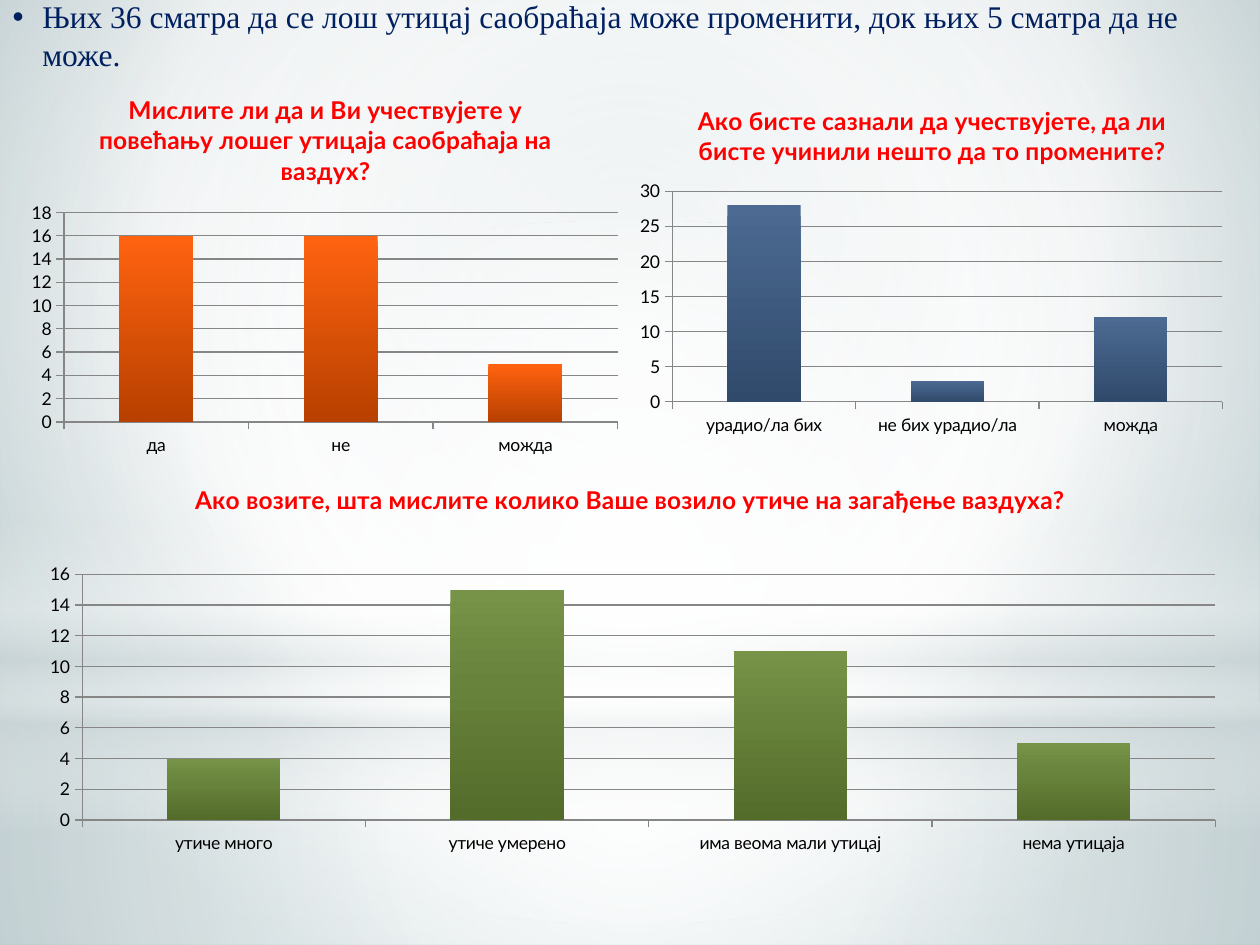
from pptx import Presentation
from pptx.chart.data import CategoryChartData
from pptx.dml.color import RGBColor
from pptx.enum.chart import XL_CHART_TYPE as ChartType, XL_TICK_MARK as Tick
from pptx.enum.shapes import MSO_SHAPE as Shape
from pptx.enum.text import MSO_ANCHOR as Anchor, MSO_AUTO_SIZE as AutoSize, PP_ALIGN as Align
from pptx.oxml import parse_xml
from pptx.oxml.ns import nsdecls, qn
from pptx.util import Cm, Pt

NAVY = RGBColor(0x00, 0x20, 0x60)
RED = RGBColor(0xFF, 0x00, 0x00)
BLACK = RGBColor(0x00, 0x00, 0x00)
GRID = RGBColor(0x86, 0x86, 0x86)
WHITE = RGBColor(0xFF, 0xFF, 0xFF)
MIST = RGBColor(0xCD, 0xD7, 0xD9)
HAZE = RGBColor(0xC2, 0xD0, 0xD3)
TEAL = RGBColor(0x9A, 0xB5, 0xBA)
ORANGE = RGBColor(0xFF, 0x63, 0x10), RGBColor(0xB8, 0x40, 0x00)
BLUE = RGBColor(0x4C, 0x6A, 0x92), RGBColor(0x30, 0x4A, 0x6B)
GREEN = RGBColor(0x76, 0x93, 0x48), RGBColor(0x53, 0x6C, 0x2A)

WIDTH, HEIGHT = 25.4, 19.05
CENTER = (50, 50, 50, 50)
STATEMENT = "Њих 36 сматра да се лош утицај саобраћаја може променити, док њих 5 сматра да не може."

GLOWS = [
    (Shape.RECTANGLE, (0, 14.17, WIDTH, 4.88),
     [(0, WHITE, 91), (37, WHITE, 76), (100, MIST, 79)], CENTER),
    (Shape.RECTANGLE, (0, 0, WIDTH, 14.17),
     [(0, WHITE, 89), (48, WHITE, 62), (100, MIST, 79)], CENTER),
    (Shape.RECTANGLE, (0, 10.46, WIDTH, 6.35),
     [(0, WHITE, 0), (29, WHITE, 30), (45, MIST, 40), (55, WHITE, 26),
      (65, MIST, 60), (100, WHITE, 0)], None),
    (Shape.OVAL, (0, 4.45, WIDTH, 14.17), [(0, WHITE, 100), (56, WHITE, 0)], CENTER),
]

CHARTS = [
    dict(box=(0.43, 1.47, 12.27, 7.82), plot=(0.07, 0.36, 0.91, 0.54),
         title="Мислите ли да и Ви учествујете у повећању лошег утицаја саобраћаја на ваздух?",
         cats=["да", "не", "можда"], vals=[16, 16, 5], top=18, step=2, colors=ORANGE),
    dict(box=(12.7, 1.7, 12.19, 7.19), plot=(0.07, 0.3, 0.91, 0.59),
         title="Ако бисте сазнали да учествујете, да ли бисте учинили нешто да то промените?",
         cats=["урадио/ла бих", "не бих урадио/ла", "можда"], vals=[28, 3, 12],
         top=30, step=5, colors=BLUE),
    dict(box=(0.43, 9.32, 24.56, 8.69), plot=(0.05, 0.26, 0.93, 0.57),
         title="Ако возите, шта мислите колико Ваше возило утиче на загађење ваздуха?",
         cats=["утиче много", "утиче умерено", "има веома мали утицај", "нема утицаја"],
         vals=[4, 15, 11, 5], top=16, step=2, colors=GREEN),
]


def set_attrs(obj, **values):
    """Set each named value on the object."""
    for name, value in values.items():
        setattr(obj, name, value)


def set_gradient(props, stops, focus):
    """Swap a solid fill for a gradient, circular when a focus is given."""
    gs = "".join(
        f'<a:gs pos="{pos * 1000}"><a:srgbClr val="{color}">'
        f'<a:alpha val="{alpha * 1000}"/></a:srgbClr></a:gs>'
        for pos, color, alpha in stops)
    if focus:
        rect = " ".join(f'{side}="{v * 1000}"' for side, v in zip("ltrb", focus))
        shade = f'<a:path path="circle"><a:fillToRect {rect}/></a:path>'
    else:
        shade = '<a:lin ang="5400000" scaled="0"/>'
    solid = props.find(qn("a:solidFill"))
    props.replace(solid, parse_xml(
        f'<a:gradFill {nsdecls("a")} rotWithShape="1"><a:gsLst>{gs}</a:gsLst>{shade}</a:gradFill>'))


def add_backdrop(slide):
    """Fill the background and lay the translucent glows over it."""
    slide.background.fill.solid()
    props = slide.element.find(".//" + qn("p:bgPr"))
    set_gradient(props, [(0, HAZE, 100), (60, WHITE, 100), (100, TEAL, 100)], (20, 10, 20, 60))
    for kind, box, stops, focus in GLOWS:
        sp = slide.shapes.add_shape(kind, *map(Cm, box))
        sp.shadow.inherit = False
        sp.line.fill.background()
        sp.fill.solid()
        set_gradient(sp.element.spPr, stops, focus)


def add_statement(slide, box):
    """Place the bulleted statement in the title placeholder, in front of the backdrop."""
    sp = slide.shapes.title
    slide.shapes.element.append(sp.element)
    left, top, width, height = map(Cm, box)
    set_attrs(sp, left=left, top=top, width=width, height=height)
    tf = sp.text_frame
    tf.text = STATEMENT
    set_attrs(tf, word_wrap=False, auto_size=AutoSize.SHAPE_TO_FIT_TEXT,
              vertical_anchor=Anchor.MIDDLE)
    p = tf.paragraphs[0]
    p.alignment = Align.LEFT
    pPr = p._p.get_or_add_pPr()
    pPr.append(parse_xml(f'<a:buFont {nsdecls("a")} typeface="Arial"/>'))
    pPr.append(parse_xml(f'<a:buChar {nsdecls("a")} char="•"/>'))
    r = p.runs[0]
    set_attrs(r.font, name="Times New Roman", size=Pt(18))
    r.font.color.rgb = NAVY


def set_plot_area(chart, plot):
    """Pin the inner plot area to fractions of the chart."""
    area = chart.element.find(".//" + qn("c:plotArea"))
    for old in area.findall(qn("c:layout")):
        area.remove(old)
    sizes = "".join(f'<c:{tag} val="{v}"/>' for tag, v in zip("xywh", plot))
    area.insert(0, parse_xml(
        f'<c:layout {nsdecls("c")}><c:manualLayout><c:layoutTarget val="inner"/>'
        f'<c:xMode val="edge"/><c:yMode val="edge"/>{sizes}</c:manualLayout></c:layout>'))


def add_column_chart(slide, box, plot, title, cats, vals, top, step, colors):
    """Add one titled column chart with gradient bars."""
    data = CategoryChartData()
    data.categories = cats
    data.add_series("Series 1", vals)
    chart = slide.shapes.add_chart(ChartType.COLUMN_CLUSTERED, *map(Cm, box), data).chart
    set_attrs(chart, has_legend=False, has_title=True)
    set_attrs(chart.font, name="Lato", size=Pt(10))
    chart.font.color.rgb = BLACK

    tf = chart.chart_title.text_frame
    tf.text = title
    font = tf.paragraphs[0].runs[0].font
    set_attrs(font, name="Lato", size=Pt(14), bold=True)
    font.color.rgb = RED
    chart.chart_title.include_in_layout = False

    value_axis = chart.value_axis
    set_attrs(value_axis, minimum_scale=0, maximum_scale=top, major_unit=step,
              has_major_gridlines=True)
    for axis in (chart.category_axis, value_axis):
        set_attrs(axis, major_tick_mark=Tick.OUTSIDE, minor_tick_mark=Tick.NONE)
    for part in (chart.category_axis, value_axis, value_axis.major_gridlines):
        part.format.line.color.rgb = GRID
        part.format.line.width = Pt(0.75)

    set_attrs(chart.plots[0], gap_width=150, vary_by_categories=False)
    fill = chart.plots[0].series[0].format.fill
    fill.gradient()
    fill.gradient_angle = 270
    for stop, color in zip(fill.gradient_stops, colors):
        stop.color.rgb = color
    set_plot_area(chart, plot)


def main():
    """Build the survey slide and save it."""
    prs = Presentation()
    set_attrs(prs, slide_width=Cm(WIDTH), slide_height=Cm(HEIGHT))
    slide = prs.slides.add_slide(prs.slide_layouts[5])
    add_backdrop(slide)
    add_statement(slide, (0, 0.2, 25.63, 1.02))
    for spec in CHARTS:
        add_column_chart(slide, **spec)
    prs.save("out.pptx")


if __name__ == "__main__":
    main()
